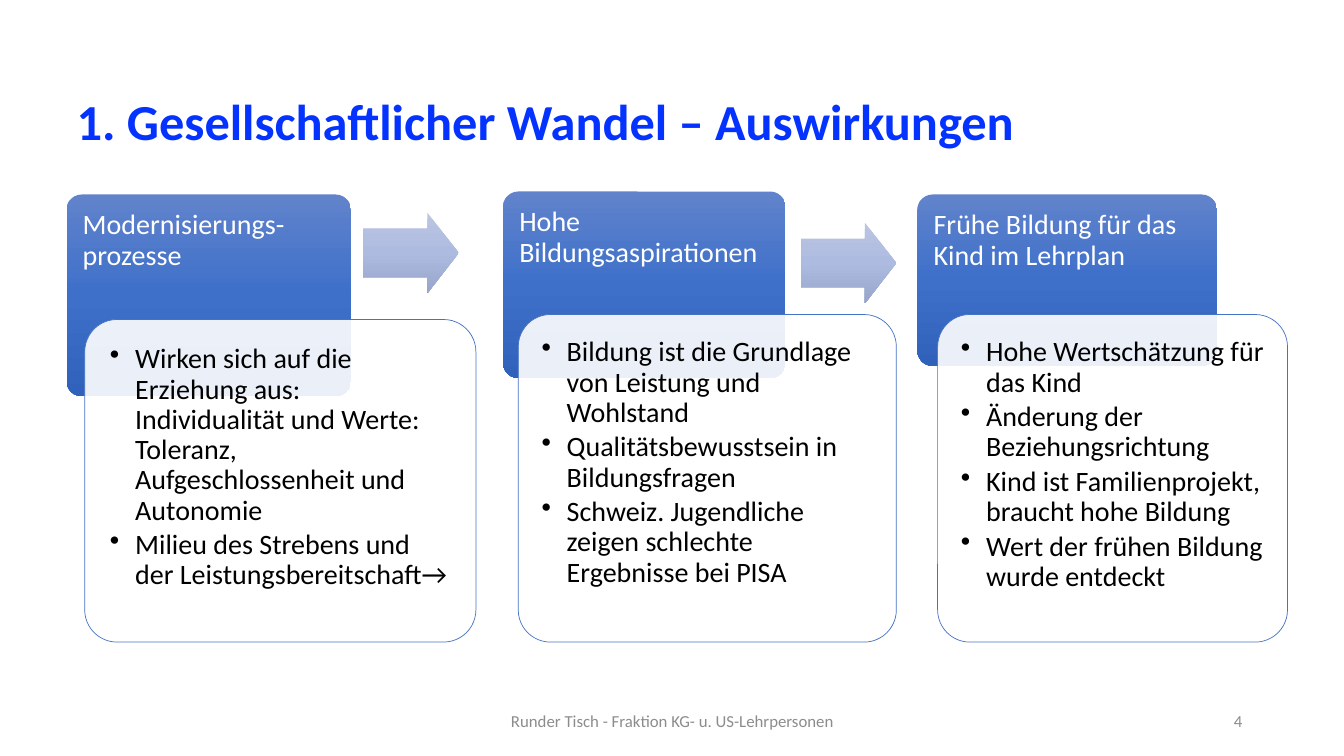
from copy import deepcopy

from lxml import etree
from pptx import Presentation
from pptx.dml.color import RGBColor
from pptx.enum.shapes import MSO_SHAPE
from pptx.enum.text import MSO_ANCHOR, PP_ALIGN
from pptx.oxml.ns import qn
from pptx.util import Inches, Pt

ROUNDED, ARROW = MSO_SHAPE.ROUNDED_RECTANGLE, MSO_SHAPE.RIGHT_ARROW
TOP, MIDDLE = MSO_ANCHOR.TOP, MSO_ANCHOR.MIDDLE
LEFT, CENTER, RIGHT = PP_ALIGN.LEFT, PP_ALIGN.CENTER, PP_ALIGN.RIGHT

COLORS = {"title": "0432FF", "heading": "FFFFFF", "body": "000000",
          "footer": "8C8C8C", "card": "FFFFFF", "outline": "4472C4"}
HEADING_GRADIENT = ["6183CB", "3E70CA", "3062BB"]
ARROW_GRADIENT = ["BBC5E3", "AEBBE0", "97A5CA"]

CARD_BOTTOM = 6.37
CORNER_INSET = 0.29  # share of the corner radius that a rounded shape adds to its margins
HEADING_RADIUS, CARD_RADIUS = 0.15, 0.32

# heading box, card (left, top, width), card margin, heading, bullets
THEMES = [
    ((0.66, 1.93, 2.82, 2.0), (0.84, 3.17, 3.88), 0.25, "Modernisierungs-prozesse", [
        "Wirken sich auf die Erziehung aus: Individualität und Werte: "
        "Toleranz, Aufgeschlossenheit und Autonomie",
        "Milieu des Strebens und der Leistungsbereitschaft→"]),
    ((4.99, 1.9, 2.8, 1.85), (5.14, 3.12, 3.75), 0.23, "Hohe Bildungsaspirationen", [
        "Bildung ist die Grundlage von Leistung und Wohlstand",
        "Qualitätsbewusstsein in Bildungsfragen",
        "Schweiz. Jugendliche zeigen schlechte Ergebnisse bei PISA"]),
    ((9.1, 1.93, 2.97, 1.7), (9.3, 3.12, 3.47), 0.23, "Frühe Bildung für das Kind im Lehrplan", [
        "Hohe Wertschätzung für das Kind",
        "Änderung der Beziehungsrichtung",
        "Kind ist Familienprojekt, braucht hohe Bildung",
        "Wert der frühen Bildung wurde entdeckt"]),
]
ARROW_CORNERS = [(3.6, 2.11), (7.94, 2.21)]
FOOTERS = [(4.42, 4.5, CENTER, "Runder Tisch - Fraktion KG- u. US-Lehrpersonen"),
           (9.42, 3.0, RIGHT, "4")]


def write(shape, texts, role, size, margin=None, anchor=TOP, align=LEFT,
          bullets=False, bold=False, spacing=0.9):
    """Fill the shape with one paragraph per text; margin applies to all four sides."""
    frame = shape.text_frame
    frame.word_wrap = True
    frame.vertical_anchor = anchor
    if margin is not None:
        for side in ("left", "top", "right", "bottom"):
            setattr(frame, f"margin_{side}", Inches(margin))
    for index, text in enumerate(texts):
        paragraph = frame.add_paragraph() if index else frame.paragraphs[0]
        paragraph.text = text
        paragraph.line_spacing = spacing
        paragraph.alignment = align
        if bullets:
            paragraph.space_after = Pt(3)
            properties = paragraph._p.get_or_add_pPr()
            properties.set("marL", str(Inches(0.25)))
            properties.set("indent", str(-Inches(0.25)))
            etree.SubElement(properties, qn("a:buChar"), char="•")
        font_format = {"name": "Calibri", "size": Pt(size), "bold": bold}
        for attribute, value in font_format.items():
            setattr(paragraph.font, attribute, value)
        paragraph.font.color.rgb = RGBColor.from_string(COLORS[role])


def add_gradient_shape(kind, box, colors):
    shape = slide.shapes.add_shape(kind, *map(Inches, box))
    shape.shadow.inherit = False
    shape.line.fill.background()
    shape.fill.gradient()
    shape.fill.gradient_angle = 270
    stop_list = next(shape._element.spPr.iter(qn("a:gsLst")))
    stop_list.append(deepcopy(stop_list[0]))
    for stop, position, color in zip(shape.fill.gradient_stops, (0, 0.5, 1), colors):
        stop.position = position
        stop.color.rgb = RGBColor.from_string(color)
    return shape


presentation = Presentation()
presentation.slide_width, presentation.slide_height = Inches(13.33), Inches(7.5)
slide = presentation.slides.add_slide(presentation.slide_layouts[5])

title = slide.shapes.title
title.left, title.top, title.width, title.height = map(Inches, (0.66, 0.64, 12.2, 1.19))
write(title, ["1. Gesellschaftlicher Wandel – Auswirkungen"], "title", 36,
      anchor=MIDDLE, bold=True)

for heading_box, (left, top, width), margin, heading_text, points in THEMES:
    heading = add_gradient_shape(ROUNDED, heading_box, HEADING_GRADIENT)
    heading.adjustments[0] = HEADING_RADIUS / min(heading_box[2:])
    write(heading, [heading_text], "heading", 20, 0.16 - CORNER_INSET * HEADING_RADIUS)

    height = CARD_BOTTOM - top
    card = slide.shapes.add_shape(ROUNDED, *map(Inches, (left, top, width, height)))
    card.shadow.inherit = False
    card.adjustments[0] = CARD_RADIUS / min(width, height)
    card.fill.solid()
    card.fill.fore_color.rgb = RGBColor.from_string(COLORS["card"])
    fill_color = next(card._element.spPr.iter(qn("a:srgbClr")))
    etree.SubElement(fill_color, qn("a:alpha"), val="90000")
    card.line.color.rgb = RGBColor.from_string(COLORS["outline"])
    card.line.width = Pt(0.5)
    write(card, points, "body", 20, margin - CORNER_INSET * CARD_RADIUS, bullets=True)

for corner in ARROW_CORNERS:
    arrow = add_gradient_shape(ARROW, (*corner, 0.95, 0.8), ARROW_GRADIENT)
    arrow.adjustments[0] = 0.6
    arrow.adjustments[1] = 0.39

for left, width, align, text in FOOTERS:
    footer = slide.shapes.add_textbox(*map(Inches, (left, 6.95, width, 0.4)))
    write(footer, [text], "footer", 12, anchor=MIDDLE, align=align, spacing=1.0)

presentation.save("out.pptx")
